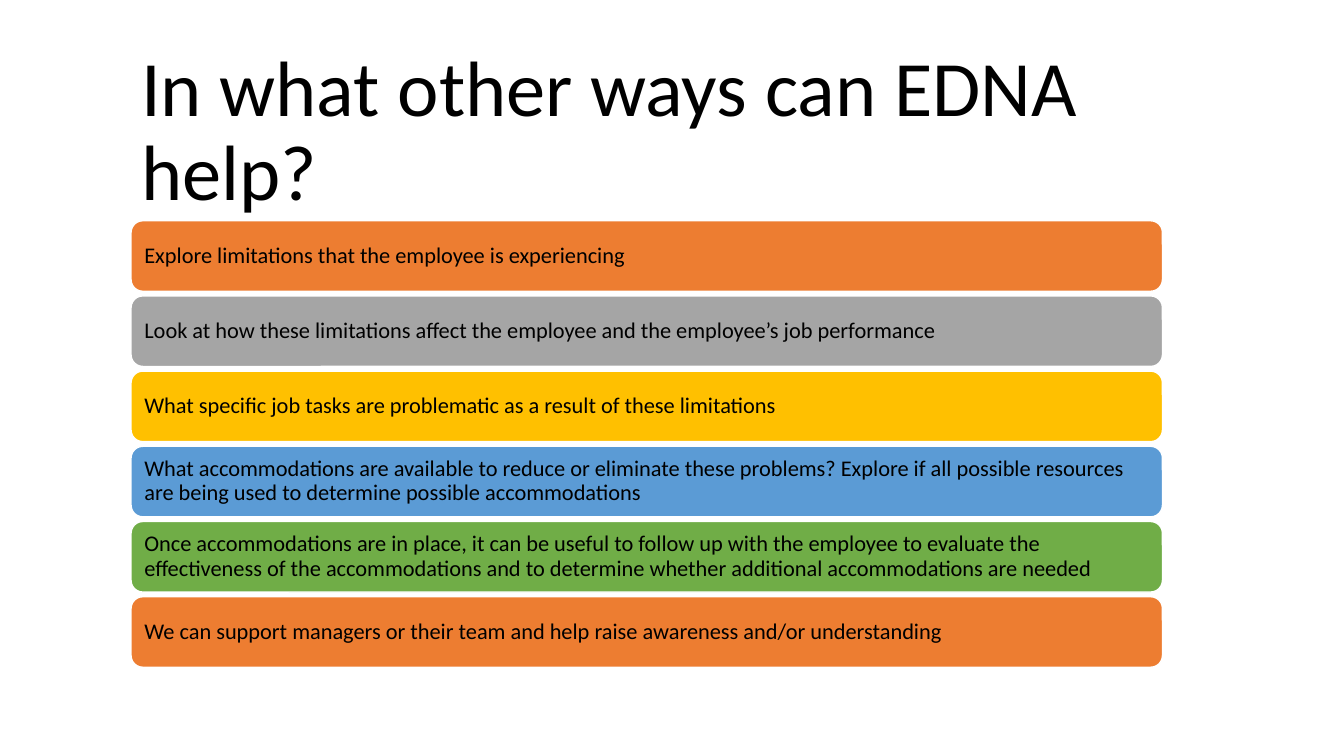
import dataclasses

import pptx
import pptx.dml.color
import pptx.enum.shapes
import pptx.enum.text
import pptx.util

WIDTH, HEIGHT = 13.33, 7.5

# Grid: one column of bars, rows at an equal pitch
LEFT, COLUMN = 1.3, 10.23
TOP, PITCH, BAR_HEIGHT = 2.19, 0.746, 0.7
TITLE_TOP, TITLE_HEIGHT = 0.42, 1.8
INSET = 0.1


@dataclasses.dataclass
class Bar:
    color: str
    text: str


BARS = [
    Bar("ED7D31", "Explore limitations that the employee is experiencing"),
    Bar("A5A5A5", "Look at how these limitations affect the employee and the "
                  "employee’s job performance"),
    Bar("FFC000", "What specific job tasks are problematic as a result of these limitations"),
    Bar("5B9BD5", "What accommodations are available to reduce or eliminate these problems? "
                  "Explore if all possible resources are being used to determine "
                  "possible accommodations"),
    Bar("70AD47", "Once accommodations are in place, it can be useful to follow up with the "
                  "employee to evaluate the effectiveness of the accommodations and to "
                  "determine whether additional accommodations are needed"),
    Bar("ED7D31", "We can support managers or their team and help raise awareness "
                  "and/or understanding"),
]


def rgb(value: str) -> pptx.dml.color.RGBColor:
    return pptx.dml.color.RGBColor.from_string(value)


def set_all(target: object, values: dict) -> None:
    for name, value in values.items():
        setattr(target, name, value)


def write(sp, text: str, size: float, inset: float) -> None:
    """Put one left-aligned, vertically centred paragraph in a shape."""
    tf = sp.text_frame
    set_all(tf, {
        "word_wrap": True,
        "auto_size": pptx.enum.text.MSO_AUTO_SIZE.NONE,
        "vertical_anchor": pptx.enum.text.MSO_ANCHOR.MIDDLE,
        "margin_left": pptx.util.Inches(inset),
        "margin_right": pptx.util.Inches(inset),
    })
    p = tf.paragraphs[0]
    set_all(p, {"alignment": pptx.enum.text.PP_ALIGN.LEFT, "line_spacing": 0.9})
    r = p.add_run()
    r.text = text
    set_all(r.font, {"name": "Calibri", "size": pptx.util.Pt(size)})
    r.font.color.rgb = rgb("000000")


def add_bar(slide, row: int, bar: Bar) -> None:
    box = (LEFT, TOP + row * PITCH, COLUMN, BAR_HEIGHT)
    sp = slide.shapes.add_shape(pptx.enum.shapes.MSO_SHAPE.ROUNDED_RECTANGLE,
                                *map(pptx.util.Inches, box))
    sp.shadow.inherit = False
    sp.fill.solid()
    sp.fill.fore_color.rgb = rgb(bar.color)
    sp.line.color.rgb = rgb("FFFFFF")
    sp.line.width = pptx.util.Pt(1)
    write(sp, bar.text, 16, INSET)


def main() -> None:
    prs = pptx.Presentation()
    prs.slide_width = pptx.util.Inches(WIDTH)
    prs.slide_height = pptx.util.Inches(HEIGHT)
    slide = prs.slides.add_slide(prs.slide_layouts[5])

    # Title
    title = slide.shapes.title
    set_all(title, {
        "left": pptx.util.Inches(LEFT),
        "top": pptx.util.Inches(TITLE_TOP),
        "width": pptx.util.Inches(COLUMN),
        "height": pptx.util.Inches(TITLE_HEIGHT),
    })
    write(title, "In what other ways can EDNA help?", 56, INSET)

    # Stack of bars
    for row, bar in enumerate(BARS):
        add_bar(slide, row, bar)

    prs.save("out.pptx")


if __name__ == "__main__":
    main()
